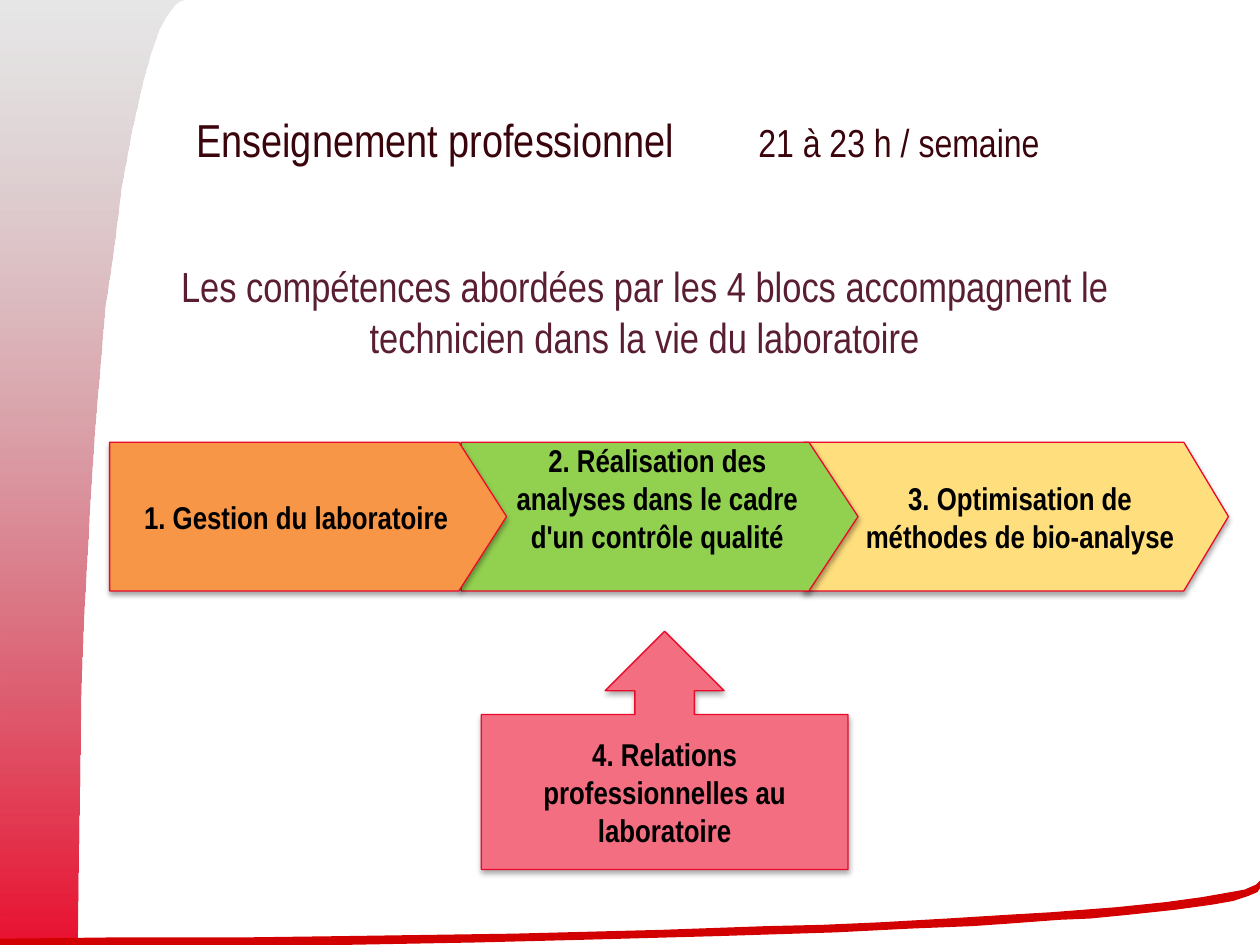
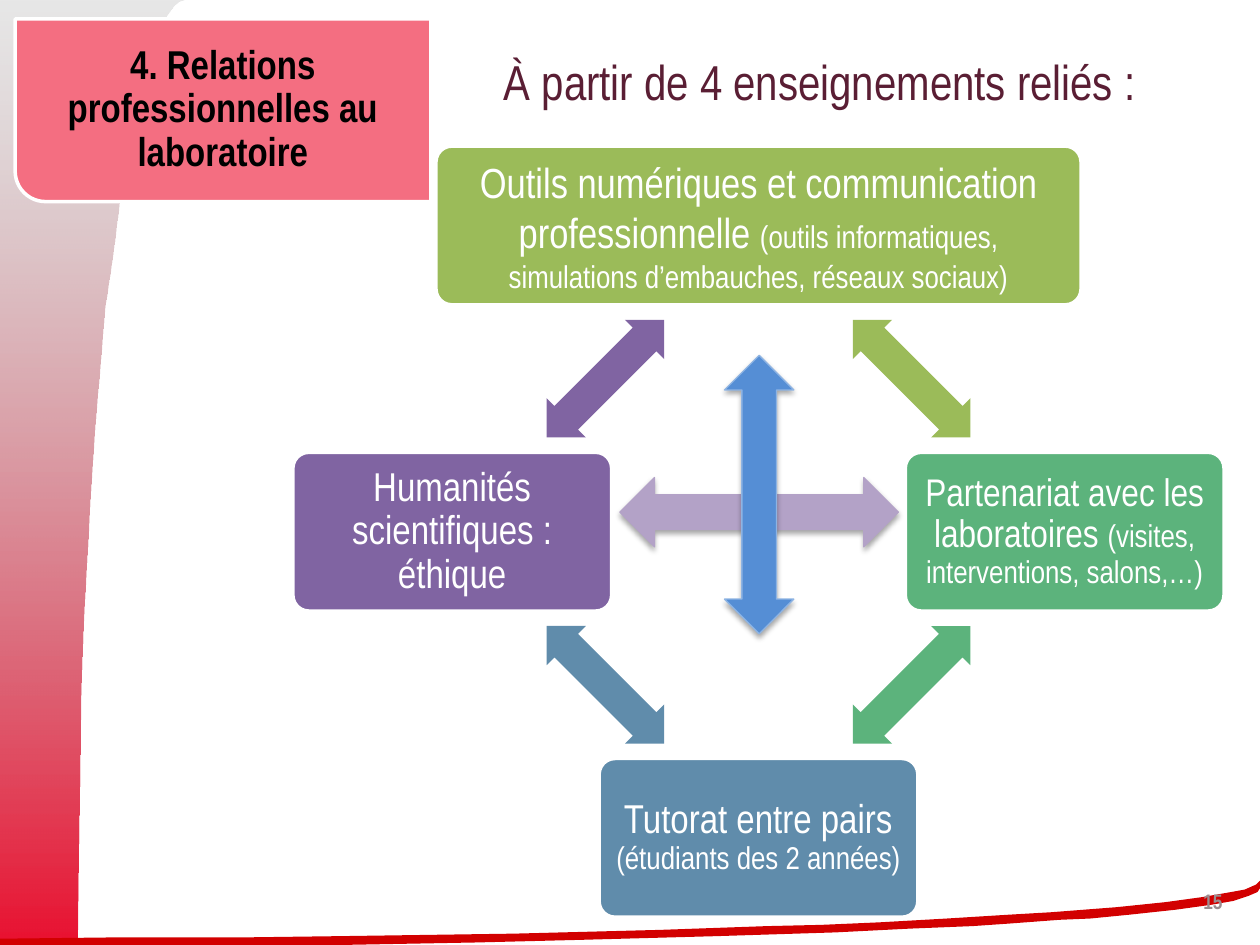
from lxml import etree
from pptx import Presentation
from pptx.dml.color import RGBColor
from pptx.enum.shapes import MSO_SHAPE
from pptx.enum.text import MSO_ANCHOR, PP_ALIGN
from pptx.oxml.ns import qn
from pptx.util import Inches, Pt

PLATE = MSO_SHAPE.PENTAGON
CALLOUT = MSO_SHAPE.UP_ARROW_CALLOUT
ROUND = MSO_SHAPE.ROUNDED_RECTANGLE
CORNER = MSO_SHAPE.ROUND_1_RECTANGLE
ARROW = MSO_SHAPE.LEFT_RIGHT_ARROW
TOP, MIDDLE = MSO_ANCHOR.TOP, MSO_ANCHOR.MIDDLE
LEFT, CENTER, RIGHT = PP_ALIGN.LEFT, PP_ALIGN.CENTER, PP_ALIGN.RIGHT

FONT = "Arial Narrow"
BLACK = RGBColor(0x00, 0x00, 0x00)
WHITE = RGBColor(0xFF, 0xFF, 0xFF)
RED = RGBColor(0xE9, 0x11, 0x30)
GRAY = RGBColor(0xA0, 0xA0, 0xA0)
SWOOSH = RGBColor(0xD2, 0x00, 0x00)
EDGE = RGBColor(0xE9, 0x0B, 0x2B)
DARK = RGBColor(0x3A, 0x04, 0x0C)
PLUM = RGBColor(0x5A, 0x1E, 0x34)
NUMBER = RGBColor(0x9B, 0x8D, 0x90)
ORANGE = RGBColor(0xF7, 0x96, 0x46)
LIME = RGBColor(0x92, 0xD0, 0x50)
YELLOW = RGBColor(0xFF, 0xDE, 0x7D)
PINK = RGBColor(0xF4, 0x6E, 0x81)
OLIVE = RGBColor(0x9B, 0xBB, 0x59)
GREEN = RGBColor(0x5C, 0xB3, 0x7C)
STEEL = RGBColor(0x60, 0x8C, 0xAB)
PURPLE = RGBColor(0x80, 0x64, 0xA2)
LILAC = RGBColor(0xB3, 0xA2, 0xC7)
BLUE = RGBColor(0x55, 0x8E, 0xD5)
SKY = RGBColor(0x8E, 0xB4, 0xE3)

BAND = [
    (1.48, 0), (0, 0), (0, 7.5), (0.61, 7.49), (0.62, 7.04), (0.63, 6.13),
    (0.64, 5.57), (0.66, 4.96), (0.69, 4.44), (0.72, 3.87), (0.76, 3.3),
    (0.81, 2.72), (0.83, 2.46), (0.9, 1.99), (0.96, 1.5), (1.04, 1.06),
    (1.13, 0.66), (1.19, 0.44), (1.26, 0.24), (1.32, 0.13), (1.38, 0.05),
    (1.42, 0.02),
]
CURVE = [
    (10, 6.99), (10, 7.05), (9.98, 7.08), (9.91, 7.11), (9.79, 7.15),
    (9.62, 7.18), (9.33, 7.22), (8.96, 7.26), (8.65, 7.29), (8.41, 7.3),
    (8.01, 7.33), (7.72, 7.35), (7.22, 7.37), (6.63, 7.4), (5.68, 7.43),
    (4.58, 7.46), (3.78, 7.48), (2.69, 7.5), (1.43, 7.51), (0, 7.51),
    (0, 7.45), (0.87, 7.44), (1.89, 7.44), (2.68, 7.43), (3.37, 7.42),
    (4.08, 7.41), (5.24, 7.38), (6.09, 7.35), (6.52, 7.34), (6.98, 7.32),
    (7.51, 7.29), (8, 7.26), (8.34, 7.24), (8.86, 7.2), (9.25, 7.16),
    (9.54, 7.12), (9.77, 7.08), (9.88, 7.06), (9.97, 7.02),
]
RELATIONS = "4. Relations professionnelles au laboratoire"
HUB = (6.02, 4.22)
REACH = 2.43


def put(parent, tag, **attrs):
    return etree.SubElement(parent, qn(tag), attrs)


def shade(shape):
    shadow = put(shape._element.spPr.find(qn("a:effectLst")), "a:outerShdw",
                 blurRad="40000", dist="23000", dir="5400000", rotWithShape="0")
    put(put(shadow, "a:srgbClr", val="000000"), "a:alpha", val="35000")


def outline(slide, points):
    spots = [(Inches(x), Inches(y)) for x, y in points]
    pen = slide.shapes.build_freeform(*spots[0])
    pen.add_line_segments(spots[1:], close=True)
    shape = pen.convert_to_shape()
    shape.shadow.inherit = False
    shape.line.fill.background()
    return shape


def add_frame(slide):
    band = outline(slide, BAND).fill
    band.gradient()
    band.gradient_angle = 90
    for stop, tint in zip(band.gradient_stops, (RED, GRAY)):
        stop.color.rgb = tint
    put(stop._gs[0], "a:alpha", val="25000")
    curve = outline(slide, CURVE).fill
    curve.solid()
    curve.fore_color.rgb = SWOOSH


def add_form(slide, kind, box, color, edge=None, width=0.75, adj=(), turn=0):
    shape = slide.shapes.add_shape(kind, *map(Inches, box))
    shape.shadow.inherit = False
    shape.rotation = turn
    shape.fill.solid()
    shape.fill.fore_color.rgb = color
    if edge is None:
        shape.line.fill.background()
    else:
        shape.line.color.rgb = edge
        shape.line.width = Pt(width)
    for index, value in enumerate(adj):
        shape.adjustments[index] = value
    return shape


def write(shape, runs, color, bold=False, align=CENTER, anchor=MIDDLE,
          spacing=1.0, inset=(0.1, 0.05, 0.1, 0.05), indent=0):
    frame = shape.text_frame
    sides = ("margin_left", "margin_top", "margin_right", "margin_bottom")
    form = dict(zip(sides, map(Inches, inset)),
                word_wrap=True, vertical_anchor=anchor)
    for name, value in form.items():
        setattr(frame, name, value)
    line = frame.paragraphs[0]
    line.alignment = align
    line.line_spacing = spacing
    if indent:
        line._p.get_or_add_pPr().set("marL", str(Inches(indent)))
    for text, size in runs:
        run = line.add_run()
        run.text = text
        for name, value in dict(name=FONT, size=Pt(size), bold=bold).items():
            setattr(run.font, name, value)
        run.font.color.rgb = color
    return line


def add_text(slide, box, runs, color, **form):
    return write(slide.shapes.add_textbox(*map(Inches, box)), runs, color, **form)


def around(x, y, width, height):
    return x - width / 2, y - height / 2, width, height


def add_block(slide, kind, box, color, adj, text, **form):
    shape = add_form(slide, kind, box, color, EDGE, adj=adj)
    shade(shape)
    write(shape, [(text, 18)], BLACK, bold=True, **form)


def add_node(slide, spot, color, runs, width=2.53, spacing=0.9, pad=0.1):
    shape = add_form(slide, ROUND, around(*spot, width, 1.26), color,
                     WHITE, 2, (0.1,))
    write(shape, runs, WHITE, spacing=spacing, inset=(pad,) * 4)


def build_steps(slide):
    add_frame(slide)
    steps = [
        (6.38, 3.37, YELLOW, 0.3, "3. Optimisation de méthodes de bio-analyse",
         dict(indent=0.24)),
        (3.66, 3.15, LIME, 0.33,
         "2. Réalisation des analyses dans le cadre d'un contrôle qualité",
         dict(indent=0.16, inset=(0.1, 0.05, 0.1, 0.35))),
        (0.87, 3.15, ORANGE, 0.32, "1. Gestion du laboratoire", {}),
    ]
    for left, width, color, tip, text, form in steps:
        add_block(slide, PLATE, (left, 3.51, width, 1.18), color, (tip,),
                  text, **form)
    add_text(slide, (1.18, 2.02, 7.87, 0.91),
             [("Les compétences abordées par les 4 blocs accompagnent le "
               "technicien dans la vie du laboratoire", 24)], PLUM, anchor=TOP)
    add_block(slide, CALLOUT, (3.82, 5.01, 2.91, 1.89), PINK,
              (0.25, 0.25, 0.25, 0.65), RELATIONS)
    title = add_text(slide, (1.46, 0.85, 7.98, 0.5),
                     [("Enseignement professionnel\t", 26.4),
                      ("21 à 23 h / semaine", 22.3)], DARK, align=LEFT)
    tabs = put(title._p.get_or_add_pPr(), "a:tabLst")
    put(tabs, "a:tab", pos=str(Inches(4.46)), algn="l")


def build_ring(slide):
    add_frame(slide)
    add_text(slide, (9.17, 6.95, 0.63, 0.4), [("15", 12)], NUMBER,
             bold=True, align=RIGHT)
    nodes = [
        (0, -1, OLIVE, dict(width=5.12, spacing=1.0),
         [("Outils numériques et communication professionnelle ", 24),
          ("(outils informatiques, simulations d’embauches, réseaux sociaux)", 18)]),
        (1, 0, GREEN, dict(pad=0.09),
         [("Partenariat avec les laboratoires ", 22),
          ("(visites, interventions, salons,…)", 18)]),
        (0, 1, STEEL, {},
         [("Tutorat entre pairs ", 23), ("(étudiants des 2 années)", 18)]),
        (-1, 0, PURPLE, {}, [("Humanités scientifiques : éthique", 23)]),
    ]
    x, y = HUB
    half = REACH / 2
    for index, (across, down, color, form, runs) in enumerate(nodes):
        add_node(slide, (x + across * REACH, y + down * REACH), color, runs, **form)
        spot = x + (across - down) * half, y + (across + down) * half
        add_form(slide, ARROW, around(*spot, 1.32, 0.44), color,
                 adj=(0.6, 0.5), turn=45 + 90 * index)
    for top, color, edge, turn in ((3.79, LILAC, LILAC, 0), (3.65, BLUE, SKY, 90)):
        shade(add_form(slide, ARROW, (4.92, top, 2.21, 0.55), color, edge,
                       turn=turn))
    add_text(slide, (3.9, 0.36, 6, 0.57),
             [("À partir de 4 enseignements reliés :", 28)], PLUM,
             align=LEFT, anchor=TOP)
    add_form(slide, CORNER, (0.12, 0.15, 3.3, 1.45), PINK, WHITE, 2, turn=180)
    add_text(slide, (0.12, 0.33, 3.3, 1.08), [(RELATIONS, 23)], BLACK,
             bold=True, spacing=0.9, inset=(0.18,) * 4)


def main():
    deck = Presentation()
    deck.slide_width, deck.slide_height = Inches(10), Inches(7.5)
    for build in (build_steps, build_ring):
        build(deck.slides.add_slide(deck.slide_layouts[6]))
    deck.save("out.pptx")


if __name__ == "__main__":
    main()
